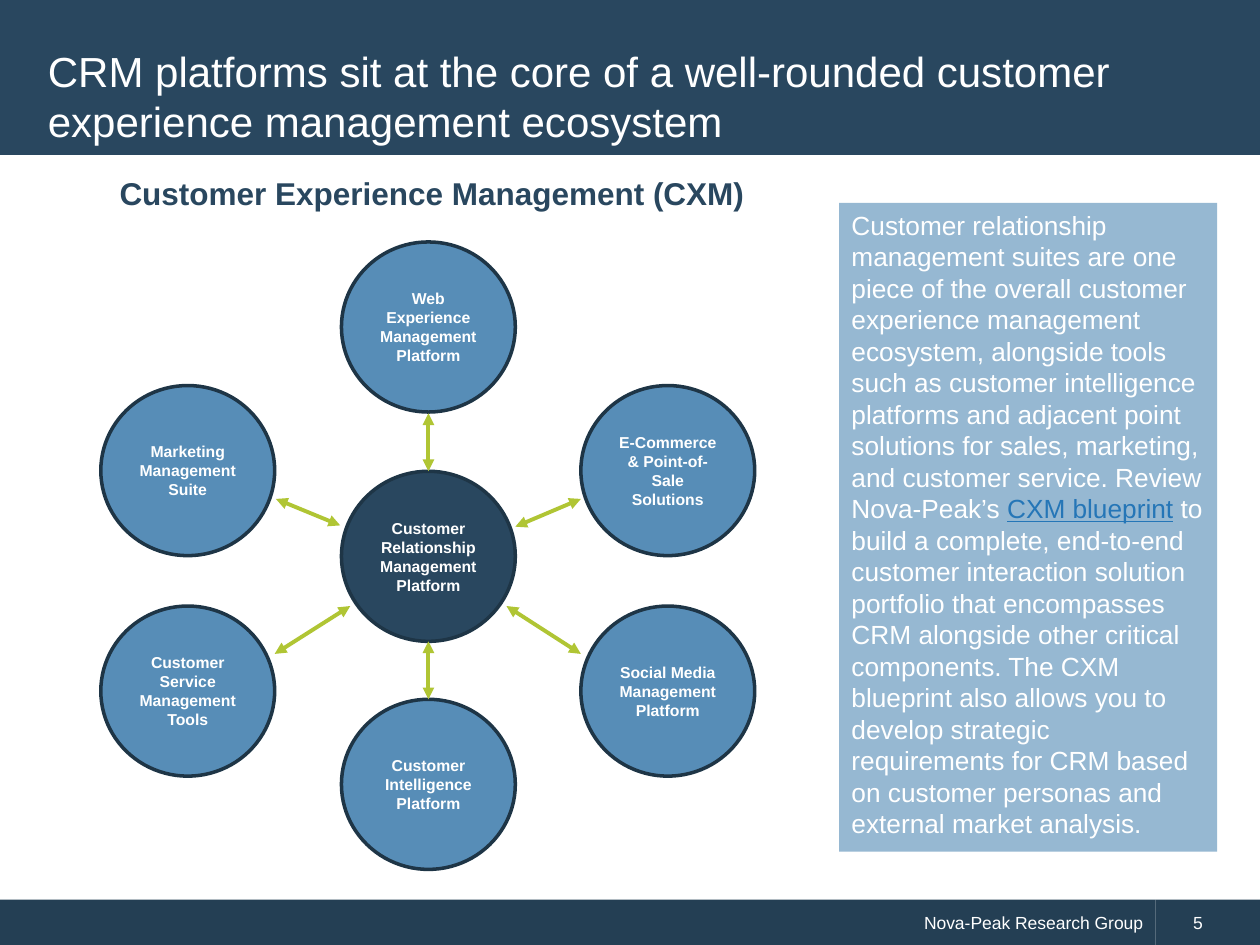
import pptx
import pptx.dml.color
import pptx.enum.shapes
import pptx.enum.text
import pptx.oxml
import pptx.oxml.ns
import pptx.util
from pptx.util import Inches

SHAPE = pptx.enum.shapes.MSO_SHAPE
ANCHOR = pptx.enum.text.MSO_ANCHOR
ALIGN = pptx.enum.text.PP_ALIGN
AUTO_SIZE = pptx.enum.text.MSO_AUTO_SIZE

COLORS = {
    "white": "FFFFFF",
    "navy": "29475F",
    "footer": "243F54",
    "outline": "1E3546",
    "blue": "578DB7",
    "panel": "96B8D2",
    "link": "2576B7",
    "green": "B0C534",
}
FONT = "Arial"
CIRCLE_W, CIRCLE_H = 1.38, 1.35
LEFT, CENTER, RIGHT = 0.8, 2.71, 4.61

CIRCLES = [
    (CENTER, 3.74, "navy", ["Customer Relationship Management", "Platform"]),
    (LEFT, 3.06, "blue", ["Marketing Management", "Suite"]),
    (RIGHT, 3.06, "blue", ["E-Commerce & Point-of-Sale Solutions"]),
    (LEFT, 4.81, "blue", ["Customer Service Management Tools"]),
    (RIGHT, 4.81, "blue", ["Social Media Management", "Platform"]),
    (CENTER, 1.92, "blue", ["Web Experience Management", "Platform"]),
    (CENTER, 5.55, "blue", ["Customer Intelligence", "Platform"]),
]
ARROWS = [
    ((3.4, 3.28), (3.4, 3.74)),
    ((4.61, 3.96), (4.09, 4.18)),
    ((4.61, 5.19), (4.02, 4.81)),
    ((3.4, 5.55), (3.4, 5.09)),
    ((2.18, 5.19), (2.78, 4.81)),
    ((2.19, 3.96), (2.7, 4.17)),
]
PANEL_RUNS = [
    ("Customer relationship management suites are one piece of the overall "
     "customer experience management ecosystem, alongside tools such as "
     "customer intelligence platforms and adjacent point solutions for sales, "
     "marketing, and customer service. Review Nova-Peak’s ", "white", False),
    ("CXM blueprint", "link", True),
    (" to build a complete, end-to-end customer interaction solution portfolio "
     "that encompasses CRM alongside other critical components. The CXM "
     "blueprint also allows you to develop strategic requirements for CRM based "
     "on customer personas and external market analysis.", "white", False),
]


def rgb(name):
    return pptx.dml.color.RGBColor.from_string(COLORS[name])


class SlideBuilder:
    def __init__(self, slide):
        self.slide = slide
        self.shapes = slide.shapes

    def add_run(self, paragraph, text, size, color="white", bold=False, underline=False):
        run = paragraph.add_run()
        run.text = text
        font = run.font
        font.name, font.size = FONT, pptx.util.Pt(size)
        font.bold, font.underline = bold, underline
        font.color.rgb = rgb(color)

    def shape(self, kind, box, fill, outline=None):
        shape = self.shapes.add_shape(kind, *map(Inches, box))
        shape.shadow.inherit = False
        shape.fill.solid()
        shape.fill.fore_color.rgb = rgb(fill)
        if outline:
            shape.line.color.rgb = rgb(outline)
            shape.line.width = pptx.util.Pt(2)
        else:
            shape.line.fill.background()
        return shape

    def title(self, text, box):
        """Fill the title placeholder and bring it in front of the header band."""
        title = self.slide.shapes.title
        title.left, title.top, title.width, title.height = map(Inches, box)
        title.element.getparent().append(title.element)
        frame = title.text_frame
        frame.auto_size = AUTO_SIZE.NONE
        frame.vertical_anchor = ANCHOR.MIDDLE
        frame.paragraphs[0].alignment = ALIGN.LEFT
        self.add_run(frame.paragraphs[0], text, 24)

    def footer_cell(self, text, box, align):
        frame = self.shape(SHAPE.RECTANGLE, box, "footer").text_frame
        frame.vertical_anchor = ANCHOR.MIDDLE
        frame.margin_left = Inches(0.3)
        frame.paragraphs[0].alignment = align
        self.add_run(frame.paragraphs[0], text, 10)

    def heading(self, text, box):
        frame = self.shapes.add_textbox(*map(Inches, box)).text_frame
        frame.word_wrap = False
        frame.auto_size = AUTO_SIZE.SHAPE_TO_FIT_TEXT
        self.add_run(frame.paragraphs[0], text, 18, "navy", bold=True)

    def panel(self, runs, box):
        frame = self.shape(SHAPE.RECTANGLE, box, "panel").text_frame
        frame.word_wrap = True
        frame.auto_size = AUTO_SIZE.SHAPE_TO_FIT_TEXT
        frame.vertical_anchor = ANCHOR.TOP
        frame.paragraphs[0].alignment = ALIGN.LEFT
        for text, color, underline in runs:
            self.add_run(frame.paragraphs[0], text, 15, color, underline=underline)

    def circle(self, left, top, fill, lines):
        box = (left, top, CIRCLE_W, CIRCLE_H)
        frame = self.shape(SHAPE.OVAL, box, fill, "outline").text_frame
        frame.word_wrap = True
        frame.vertical_anchor = ANCHOR.MIDDLE
        for index, line in enumerate(lines):
            paragraph = frame.add_paragraph() if index else frame.paragraphs[0]
            paragraph.alignment = ALIGN.CENTER
            self.add_run(paragraph, line, 9, bold=True)

    def double_arrow(self, start, end):
        arrow = self.shapes.add_connector(
            pptx.enum.shapes.MSO_CONNECTOR.STRAIGHT, *map(Inches, start + end))
        arrow.line.color.rgb = rgb("green")
        arrow.line.width = pptx.util.Pt(2.25)
        line = arrow.line._get_or_add_ln()
        for tag in ("a:headEnd", "a:tailEnd"):
            tip = pptx.oxml.parse_xml(f"<{tag} {pptx.oxml.ns.nsdecls('a')} type='triangle'/>")
            line.append(tip)
        arrow.element.spPr.append(
            pptx.oxml.parse_xml(f"<a:effectLst {pptx.oxml.ns.nsdecls('a')}/>"))

    def ecosystem(self, circles, arrows):
        """Group the circles and the arrows between them."""
        self.shapes = self.slide.shapes.add_group_shape().shapes
        for circle in circles:
            self.circle(*circle)
        for start, end in arrows:
            self.double_arrow(start, end)
        self.shapes = self.slide.shapes


def main():
    deck = pptx.Presentation()
    deck.slide_width, deck.slide_height = Inches(10), Inches(7.5)
    builder = SlideBuilder(deck.slides.add_slide(deck.slide_layouts[5]))

    builder.footer_cell("Nova-Peak Research Group", (0, 7.14, 9.17, 0.37), ALIGN.RIGHT)
    builder.footer_cell("5", (9.17, 7.14, 0.83, 0.37), ALIGN.LEFT)
    builder.shape(SHAPE.RECTANGLE, (0, 0, 10, 1.23), "navy")
    builder.title("CRM platforms sit at the core of a well-rounded customer "
                  "experience management ecosystem", (0.28, 0.28, 9.43, 0.96))
    builder.heading("Customer Experience Management (CXM)", (0.85, 1.33, 5.21, 0.4))
    builder.panel(PANEL_RUNS, (6.66, 1.61, 3, 5.15))
    builder.ecosystem(CIRCLES, ARROWS)

    deck.save("out.pptx")


if __name__ == "__main__":
    main()
